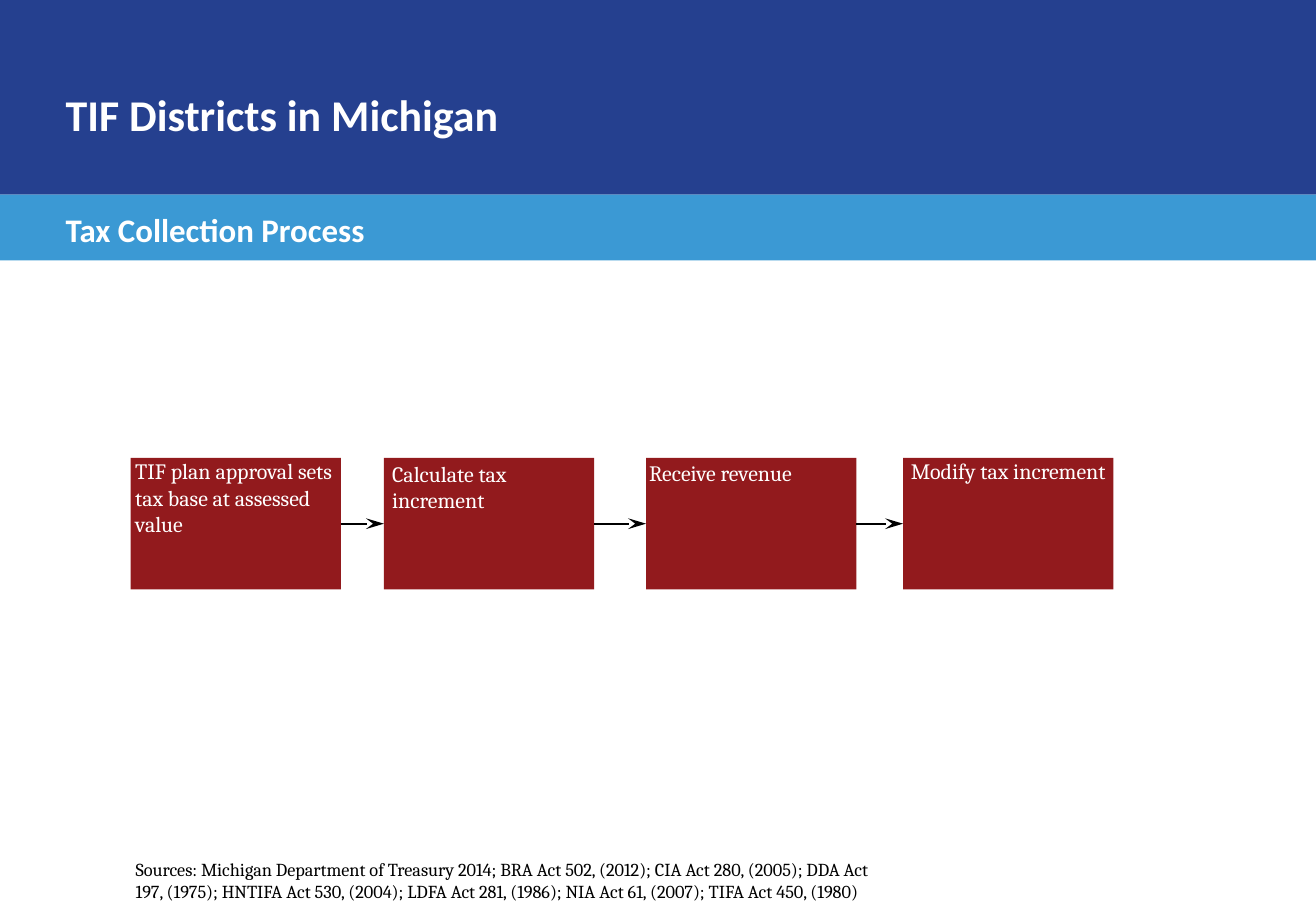
from collections import namedtuple
from dataclasses import dataclass
from itertools import pairwise

from lxml.etree import SubElement
from pptx import Presentation
from pptx.dml.color import RGBColor
from pptx.enum.shapes import MSO_CONNECTOR as Link, MSO_SHAPE as Shape
from pptx.enum.text import MSO_ANCHOR as Anchor, PP_ALIGN as Align
from pptx.oxml.ns import qn
from pptx.util import Cm, Pt


@dataclass(frozen=True)
class Theme:
    """Colours, fonts and type sizes of the slide."""
    navy: RGBColor = RGBColor.from_string("25408F")
    sky: RGBColor = RGBColor.from_string("3B99D4")
    maroon: RGBColor = RGBColor.from_string("921A1D")
    white: RGBColor = RGBColor.from_string("FFFFFF")
    black: RGBColor = RGBColor.from_string("000000")
    heading_font: str = "Calibri"
    body_font: str = "Cambria"
    title_size: Pt = Pt(24)
    subtitle_size: Pt = Pt(18)
    step_size: Pt = Pt(12)
    source_size: Pt = Pt(10)
    arrow_width: Pt = Pt(1.25)


THEME = Theme()
Box = namedtuple("Box", "left top width height")
Step = namedtuple("Step", "left inset_left inset_top text")

STEPS = [
    Step(0, 0.09, 0, "TIF plan approval sets tax base at assessed value"),
    Step(4.89, 0.16, 0.05, "Calculate tax increment"),
    Step(9.95, 0.06, 0.03, "Receive revenue"),
    Step(14.91, 0.15, 0, "Modify tax increment"),
]
SOURCES = [
    "Sources: Michigan Department of Treasury 2014; BRA Act 502, (2012); "
    "CIA Act 280, (2005); DDA Act",
    "197, (1975); HNTIFA Act 530, (2004); LDFA Act 281, (1986); "
    "NIA Act 61, (2007); TIFA Act 450, (1980)",
]


def write(shape, lines, font, size, color, bold=False, inset_left=0, inset_top=0):
    """Write top-left aligned paragraphs into a shape."""
    frame = shape.text_frame
    frame.word_wrap = True
    frame.vertical_anchor = Anchor.TOP
    frame.margin_left, frame.margin_top = Cm(inset_left), Cm(inset_top)
    frame.margin_right = frame.margin_bottom = 0
    frame.text = "\n".join(lines)
    for para in frame.paragraphs:
        para.alignment = Align.LEFT
        para.font.name = font
        para.font.size = size
        para.font.color.rgb = color
        para.font.bold = bold


def add_block(page, box, fill):
    """Add a plain filled rectangle."""
    block = page.shapes.add_shape(Shape.RECTANGLE, *map(Cm, box))
    block.shadow.inherit = False
    block.fill.solid()
    block.fill.fore_color.rgb = fill
    block.line.fill.background()
    return block


def add_band(page, box, fill, text, size, text_top):
    """Add a heading band with its text."""
    band = add_block(page, box, fill)
    write(band, [text], THEME.heading_font, size, THEME.white, True, 1.27, text_top)


def add_arrow(page, start, end):
    """Join two neighbouring steps with an arrow."""
    arrow = page.shapes.add_connector(Link.STRAIGHT, 0, 0, 0, 0)
    arrow.begin_connect(start, 3)
    arrow.end_connect(end, 1)
    arrow.line.color.rgb = THEME.black
    arrow.line.width = THEME.arrow_width
    properties = arrow.line._get_or_add_ln()
    SubElement(properties, qn("a:tailEnd"), type="stealth", w="med", len="lg")
    SubElement(arrow._element.spPr, qn("a:effectLst"))


def add_process(page, box, steps, step_width):
    """Place the steps in the box and link them in order."""
    blocks = []
    for step in steps:
        place = Box(box.left + step.left, box.top, step_width, box.height)
        block = add_block(page, place, THEME.maroon)
        write(block, [step.text], THEME.body_font, THEME.step_size, THEME.white,
              inset_left=step.inset_left, inset_top=step.inset_top)
        blocks.append(block)
    for start, end in pairwise(blocks):
        add_arrow(page, start, end)


def add_sources(page, box, lines):
    """Add the source note."""
    note = page.shapes.add_textbox(*map(Cm, box))
    write(note, lines, THEME.body_font, THEME.source_size, THEME.black)


def main():
    """Build and save the deck."""
    deck = Presentation()
    deck.slide_width, deck.slide_height = Cm(25.4), Cm(17.78)
    page = deck.slides.add_slide(deck.slide_layouts[6])
    add_band(page, Box(0, 0, 25.4, 3.76), THEME.navy,
             "TIF Districts in Michigan", THEME.title_size, 1.7)
    add_band(page, Box(0, 3.76, 25.4, 1.27), THEME.sky,
             "Tax Collection Process", THEME.subtitle_size, 0.29)
    add_process(page, Box(2.52, 8.84, 18.97, 2.54), STEPS, 4.06)
    add_sources(page, Box(2.62, 16.56, 15.95, 0.84), SOURCES)
    deck.save("out.pptx")


if __name__ == "__main__":
    main()
